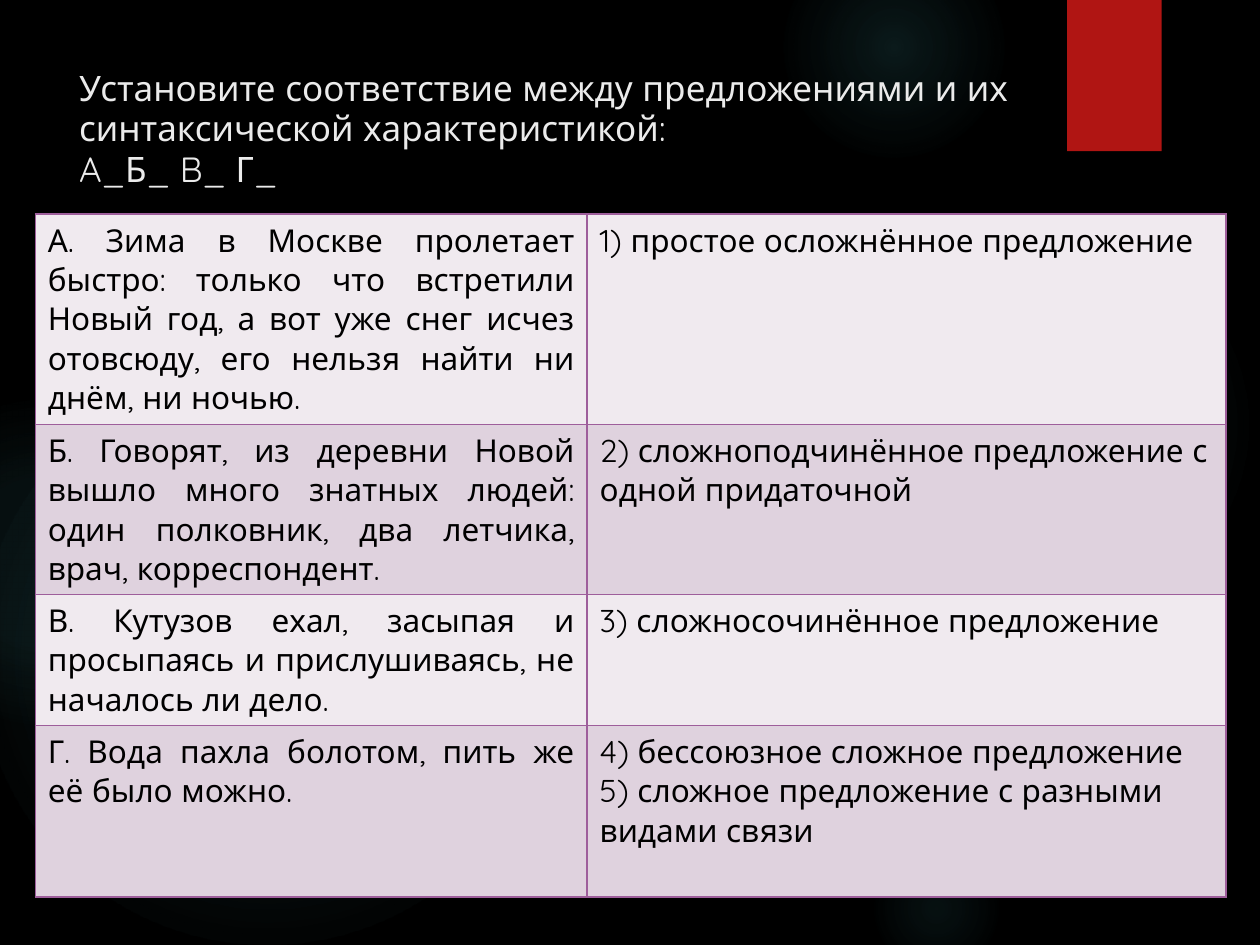
import dataclasses

import lxml.etree
import pptx
import pptx.dml.color
import pptx.enum.shapes
import pptx.enum.text
import pptx.oxml.ns
import pptx.util


@dataclasses.dataclass(frozen=True)
class Theme:
    font: str = "Quicksand"
    title_size: int = 20
    table_size: int = 18
    background: str = "000000"
    glow: str = "50B9C1"
    bookmark: str = "B01513"
    title: str = "EBEBEB"
    table_text: str = "000000"
    border: str = "9E5E9B"
    bands: tuple = ("F0EAEF", "DFD2DE")


THEME = Theme()
SLIDE_SIZE = (10, 7.5)
ALIGN = pptx.enum.text.PP_ALIGN

# left, top, diameter, then (position, opacity) stops in percent
GLOWS = [
    (6.89, 1.83, 3.08, [(0, 7), (36, 6), (69, 0)]),
    (6.22, -0.5, 1.75, [(0, 14), (36, 7), (73, 0)]),
    (6.89, 6.67, 1.08, [(0, 9), (36, 5), (66, 0)]),
    (-0.17, 2.92, 4.58, [(0, 11), (36, 10), (75, 0)]),
    (-0.92, 3.17, 2.58, [(0, 8), (36, 8), (72, 0)]),
]
TITLE = ("Установите соответствие между предложениями и их "
         "синтаксической характеристикой:\nA_Б_ B_ Г_")
COLUMN_WIDTHS = [4.38, 5.07]
ROW_HEIGHTS = [1.67, 1.35, 1.04, 1.36]
ROWS = [
    ("А. Зима в Москве пролетает быстро: только что встретили Новый год, "
     "а вот уже снег исчез отовсюду, его нельзя найти ни днём, ни ночью.",
     "1) простое осложнённое предложение"),
    ("Б. Говорят, из деревни Новой вышло много знатных людей: "
     "один полковник, два летчика, врач, корреспондент.",
     "2) сложноподчинённое предложение с одной придаточной"),
    ("В. Кутузов ехал, засыпая и просыпаясь и прислушиваясь, "
     "не началось ли дело.",
     "3) сложносочинённое предложение"),
    ("Г. Вода пахла болотом, пить же её было можно.",
     "4) бессоюзное сложное предложение\n"
     "5) сложное предложение с разными видами связи"),
]


def inches(*lengths):
    return [pptx.util.Inches(length) for length in lengths]


def rgb(color):
    return pptx.dml.color.RGBColor.from_string(color)


def add_element(parent, tag, **attributes):
    element = lxml.etree.SubElement(parent, pptx.oxml.ns.qn(tag))
    for name, value in attributes.items():
        element.set(name, str(value))
    return element


def write_text(frame, text, *, size, color, align=ALIGN.LEFT, spacing=None):
    """Write each line of the text as one paragraph."""
    frame.word_wrap = True
    for index, line in enumerate(text.split("\n")):
        paragraph = frame.add_paragraph() if index else frame.paragraphs[0]
        paragraph.alignment = align
        paragraph.line_spacing = spacing
        run = paragraph.add_run()
        run.text = line
        run.font.name = THEME.font
        run.font.size = pptx.util.Pt(size)
        run.font.color.rgb = rgb(color)


def add_plain_shape(slide, kind, box):
    shape = slide.shapes.add_shape(kind, *inches(*box))
    shape.shadow.inherit = False
    shape.line.fill.background()
    return shape


def add_glow(slide, box, stops):
    """Add a circle whose colour fades out from its centre."""
    shape = add_plain_shape(slide, pptx.enum.shapes.MSO_SHAPE.OVAL, box)
    shape.fill.gradient()
    gradient = shape._element.spPr.find(pptx.oxml.ns.qn("a:gradFill"))
    for child in list(gradient):
        gradient.remove(child)
    stop_list = add_element(gradient, "a:gsLst")
    for position, opacity in stops:
        stop = add_element(stop_list, "a:gs", pos=position * 1000)
        color = add_element(stop, "a:srgbClr", val=THEME.glow)
        add_element(color, "a:alpha", val=opacity * 1000)
    shade = add_element(gradient, "a:path", path="circle")
    add_element(shade, "a:fillToRect", l=50000, t=50000, r=50000, b=50000)


def add_backdrop(slide):
    slide.background.fill.solid()
    slide.background.fill.fore_color.rgb = rgb(THEME.background)
    for left, top, diameter, stops in GLOWS:
        add_glow(slide, (left, top, diameter, diameter), stops)


def add_bookmark(slide, box):
    shape = add_plain_shape(slide, pptx.enum.shapes.MSO_SHAPE.RECTANGLE, box)
    shape.fill.solid()
    shape.fill.fore_color.rgb = rgb(THEME.bookmark)


def add_title(slide, box):
    frame = slide.shapes.add_textbox(*inches(*box)).text_frame
    write_text(frame, TITLE, size=THEME.title_size, color=THEME.title,
               spacing=0.96)


def add_borders(cell):
    """Draw all four borders; they must come before the cell's fill."""
    properties = cell._tc.get_or_add_tcPr()
    for side in ("a:lnL", "a:lnR", "a:lnT", "a:lnB"):
        line = add_element(properties, side, w=pptx.util.Pt(1))
        fill = add_element(line, "a:solidFill")
        add_element(fill, "a:srgbClr", val=THEME.border)


def add_matching_table(slide, left, top):
    box = (left, top, sum(COLUMN_WIDTHS), sum(ROW_HEIGHTS))
    table = slide.shapes.add_table(
        len(ROWS), len(COLUMN_WIDTHS), *inches(*box)).table
    table.first_row = table.horz_banding = False
    for column, width in zip(table.columns, inches(*COLUMN_WIDTHS)):
        column.width = width
    for row, height in zip(table.rows, inches(*ROW_HEIGHTS)):
        row.height = height
    for row_index, texts in enumerate(ROWS):
        for column_index, text in enumerate(texts):
            cell = table.cell(row_index, column_index)
            add_borders(cell)
            cell.fill.solid()
            cell.fill.fore_color.rgb = rgb(THEME.bands[row_index % 2])
            write_text(cell.text_frame, text, size=THEME.table_size,
                       color=THEME.table_text,
                       align=ALIGN.LEFT if column_index else ALIGN.JUSTIFY)


def main():
    presentation = pptx.Presentation()
    presentation.slide_width, presentation.slide_height = inches(*SLIDE_SIZE)
    slide = presentation.slides.add_slide(presentation.slide_layouts[6])
    add_backdrop(slide)
    add_bookmark(slide, (8.47, 0, 0.75, 1.2))
    add_title(slide, (0.53, 0.5, 7.72, 1.53))
    add_matching_table(slide, 0.28, 1.7)
    presentation.save("out.pptx")


if __name__ == "__main__":
    main()
